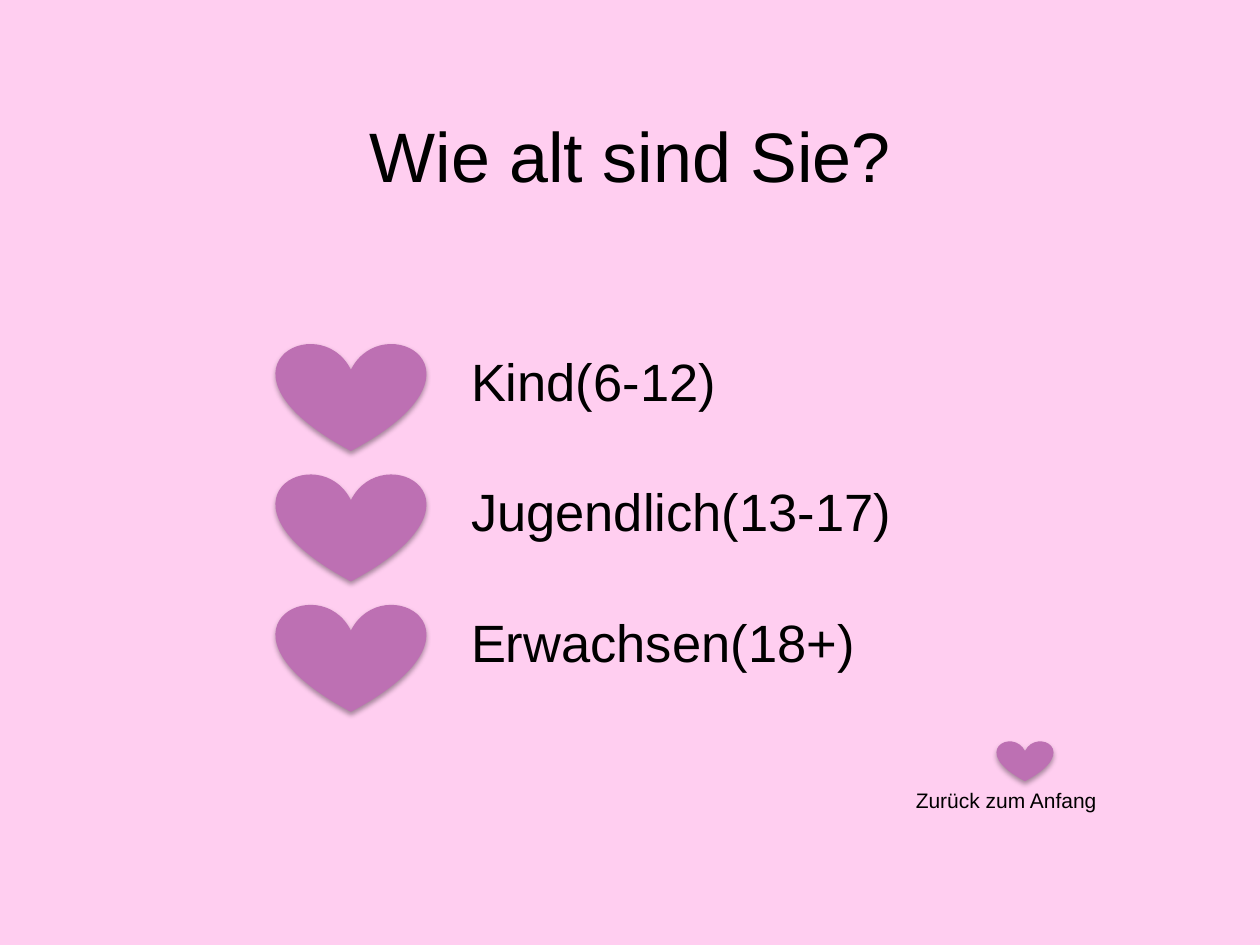
from dataclasses import dataclass

from lxml import etree
from pptx import Presentation
from pptx import util as u
from pptx.dml.color import RGBColor
from pptx.enum import shapes, text
from pptx.oxml import ns

TITLE = "Wie alt sind Sie?"
AGES = ["Kind(6-12)", "Jugendlich(13-17)", "Erwachsen(18+)"]
BACK = "Zurück zum Anfang"


@dataclass(frozen=True)
class Theme:
    font: str = "Arial"
    ink: str = "000000"
    background: str = "FFCEF0"
    heart: str = "BD70B3"
    title: int = 40
    option: int = 30
    back: int = 12


THEME = Theme()
WIDTH, HEIGHT = 10, 7.5
MARGIN = 0.05 * WIDTH
HEART_X, LABEL_X = 2.19, 3.64
HEART_W, HEART_H = 1.19, 0.86
FIRST_ROW, ROW_STEP = 2.72, 1.035


def add_label(s, content, box, size, align=text.PP_ALIGN.LEFT,
              anchor=text.MSO_ANCHOR.TOP):
    sp = s.shapes.add_textbox(*map(u.Inches, box))
    tf = sp.text_frame
    tf.word_wrap = True
    tf.vertical_anchor = anchor
    tf.text = content
    p = tf.paragraphs[0]
    p.alignment = align
    r = p.runs[0]
    r.font.name = THEME.font
    r.font.size = u.Pt(size)
    r.font.color.rgb = RGBColor.from_string(THEME.ink)


def add_heart(s, box):
    sp = s.shapes.add_shape(shapes.MSO_SHAPE.HEART, *map(u.Inches, box))
    sp.fill.solid()
    sp.fill.fore_color.rgb = RGBColor.from_string(THEME.heart)
    sp.line.fill.background()
    sp.shadow.inherit = False
    effects = sp._element.spPr.find(ns.qn("a:effectLst"))
    shadow = etree.SubElement(
        effects, ns.qn("a:outerShdw"), blurRad=str(u.Pt(3.1)),
        dist=str(u.Pt(1.8)), dir="5400000", rotWithShape="0")
    color = etree.SubElement(shadow, ns.qn("a:srgbClr"), val=THEME.ink)
    etree.SubElement(color, ns.qn("a:alpha"), val="35000")


def main():
    prs = Presentation()
    prs.slide_width, prs.slide_height = u.Inches(WIDTH), u.Inches(HEIGHT)
    s = prs.slides.add_slide(prs.slide_layouts[6])
    fill = s.background.fill
    fill.solid()
    fill.fore_color.rgb = RGBColor.from_string(THEME.background)

    add_label(s, BACK, (7.17, 6.2, 1.93, 0.3), THEME.back)
    add_heart(s, (7.91, 5.88, 0.45, 0.32))
    add_label(s, TITLE, (MARGIN, 0.08 * HEIGHT, WIDTH - 2 * MARGIN, 1.25),
              THEME.title, text.PP_ALIGN.CENTER, text.MSO_ANCHOR.MIDDLE)
    for row, age in enumerate(AGES):
        top = FIRST_ROW + row * ROW_STEP
        add_heart(s, (HEART_X, top, HEART_W, HEART_H))
        add_label(s, age, (LABEL_X, top, 4.2, 0.61), THEME.option)

    prs.save("out.pptx")


if __name__ == "__main__":
    main()
